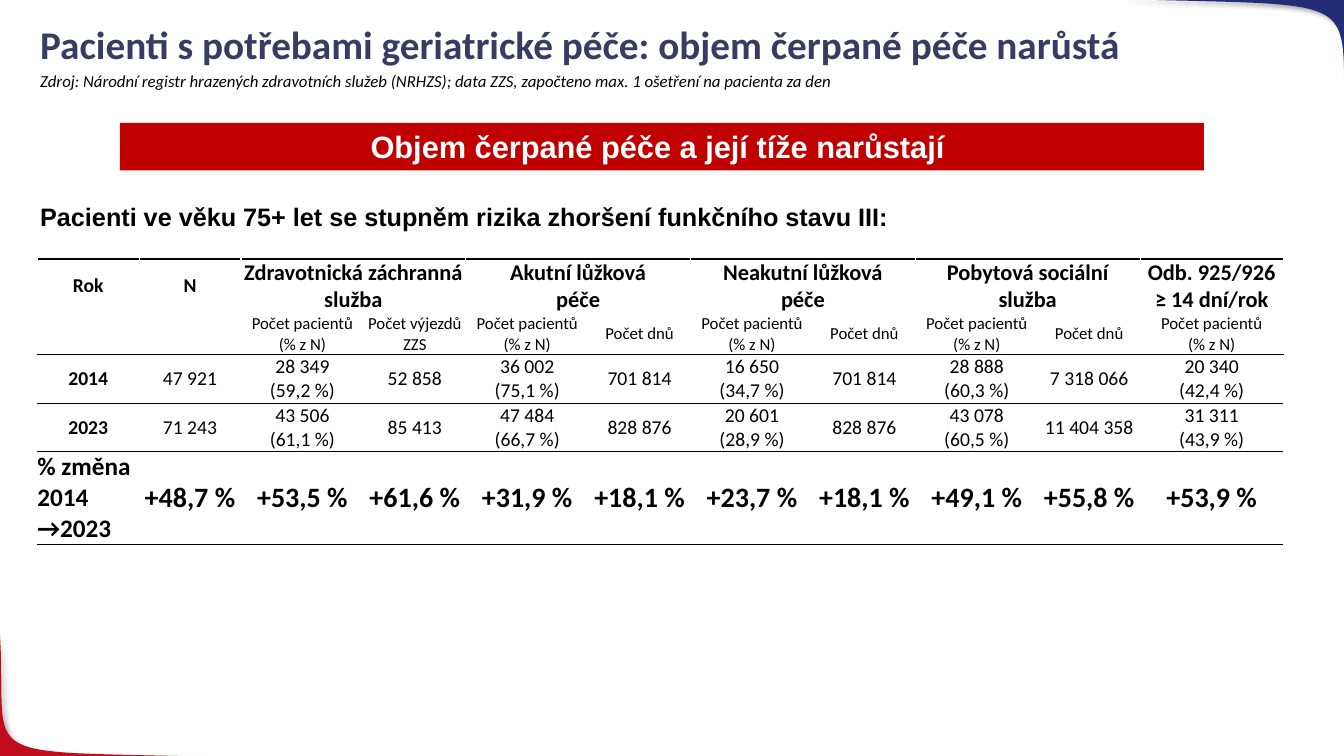
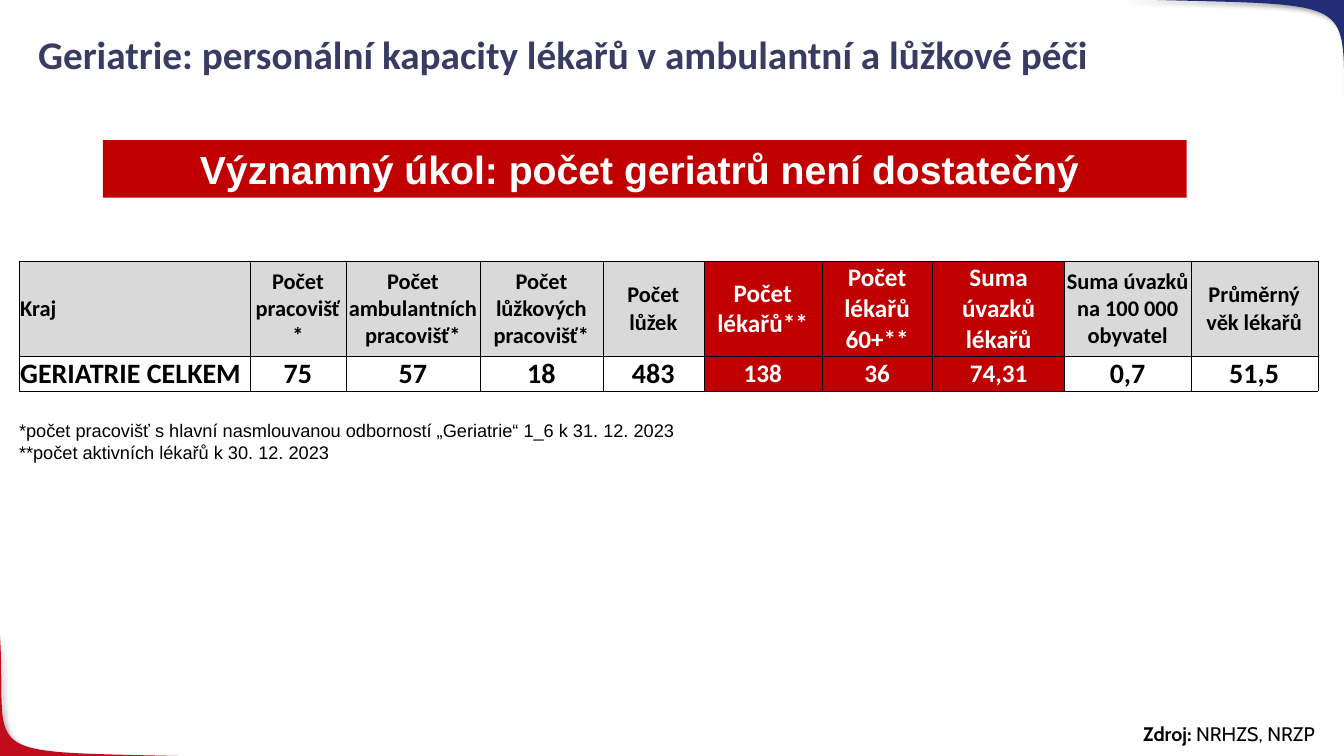
"""Builds two slides on geriatric care: consumed care and physician capacity."""
import pptx
import pptx.dml.color
import pptx.enum.shapes
import pptx.enum.text
import pptx.util
from lxml import etree
from pptx.util import Inches

PP = pptx.enum.text.PP_ALIGN
ANCHOR = pptx.enum.text.MSO_ANCHOR
NS = "http://schemas.openxmlformats.org/drawingml/2006/main"

THEME = {
    "navy": "232C77", "red": "C10C1D", "alert": "C00000", "grey": "D9D9D9",
    "title": "383C63", "ink": "000000", "white": "FFFFFF",
    "plain_table": "{2D5ABB26-0587-4C30-8999-92F81FD0307C}",
}
STYLES = {
    "title": {"name": "Calibri", "size": 28, "bold": True, "color": "title"},
    "source": {"name": "Calibri", "size": 12, "italic": True, "color": "ink"},
    "lead": {"name": "Arial", "size": 18, "bold": True, "color": "ink"},
    "banner": {"name": "Arial", "size": 22, "bold": True, "color": "white"},
    "footnote": {"name": "Arial", "size": 13, "color": "ink"},
    "credit": {"name": "Cabin", "size": 14, "color": "ink"},
    "cell": {"name": "Calibri", "size": 14, "color": "ink"},
}

CORNERS = [
    ("red", [(2.13, 7.51), (-0.34, 7.44), (0.08, 7.59), (0, 6.3)], (-0.01, 7.51)),
    ("navy", [(11.11, -0.01), (13.7, 0.07), (13.26, -0.1), (13.35, 1.42)], (13.35, -0.01)),
]

CARE_TITLE = "Pacienti s potřebami geriatrické péče: objem čerpané péče narůstá"
CARE_SOURCE = ("Zdroj: Národní registr hrazených zdravotních služeb (NRHZS); data ZZS, "
               "započteno max. 1 ošetření na pacienta za den")
CARE_BANNER = "Objem čerpané péče a její tíže narůstají "
CARE_LEAD = "Pacienti ve věku 75+ let se stupněm rizika zhoršení funkčního stavu III:"
PATIENTS = "Počet pacientů\n(% z N)"
CARE_ROWS = [
    ["Rok", "N", "Zdravotnická záchranná služba", "", "Akutní lůžková\npéče", "",
     "Neakutní lůžková\npéče", "", "Pobytová sociální služba", "", "Odb. 925/926\n≥ 14 dní/rok"],
    ["", "", PATIENTS, "Počet výjezdů ZZS", PATIENTS, "Počet dnů", PATIENTS, "Počet dnů",
     PATIENTS, "Počet dnů", PATIENTS],
    ["2014", "47 921", "28 349\n(59,2 %)", "52 858", "36 002\n(75,1 %)", "701 814",
     "16 650\n(34,7 %)", "701 814", "28 888\n(60,3 %)", "7 318 066", "20 340\n(42,4 %)"],
    ["2023", "71 243", "43 506\n(61,1 %)", "85 413", "47 484\n(66,7 %)", "828 876",
     "20 601\n(28,9 %)", "828 876", "43 078\n(60,5 %)", "11 404 358", "31 311\n(43,9 %)"],
    ["% změna 2014\n→2023", "+48,7 %", "+53,5 %", "+61,6 %", "+31,9 %", "+18,1 %",
     "+23,7 %", "+18,1 %", "+49,1 %", "+55,8 %", "+53,9 %"],
]
CARE_WIDTHS = [1.01] + [1.01, 1.22] * 4 + [1.01, 1.42]
CARE_HEIGHTS = [0.54, 0.41, 0.48, 0.48, 0.92]
CARE_GROUPS = [2, 4, 6, 8]
CARE_RULES = [{"T": 1}, {"B": 1}, {"T": 1, "B": 0.25}, {"T": 0.25, "B": 1}, {"T": 1, "B": 1}]
CARE_TEXT = [
    ({"size": 14, "bold": True}, {"size": 16, "bold": True}),
    ({"size": 12}, {"size": 12}),
    ({"bold": True}, {}),
    ({"bold": True}, {}),
    ({"size": 18, "bold": True}, {"size": 20, "bold": True}),
]

STAFF_TITLE = "Geriatrie: personální kapacity lékařů v ambulantní a lůžkové péči"
STAFF_BANNER = "Významný úkol: počet geriatrů není dostatečný "
STAFF_COLUMNS = [
    ("Kraj", "GERIATRIE CELKEM", 2.29),
    ("Počet pracovišť*", "75", 0.95),
    ("Počet ambulantních pracovišť*", "57", 1.33),
    ("Počet lůžkových pracovišť*", "18", 1.22),
    ("Počet lůžek", "483", 1),
    ("Počet lékařů**", "138", 1.17),
    ("Počet lékařů 60+**", "36", 1.1),
    ("Suma úvazků lékařů", "74,31", 1.31),
    ("Suma úvazků na 100 000 obyvatel", "0,7", 1.25),
    ("Průměrný věk lékařů", "51,5", 1.26),
]
STAFF_HEIGHTS = [0.94, 0.35]
STAFF_ALERTS = range(5, 8)
STAFF_NOTES = ("*počet pracovišť s hlavní nasmlouvanou odborností „Geriatrie“ 1_6 k 31. 12. 2023\n"
               "**počet aktivních lékařů k 30. 12. 2023")
STAFF_CREDIT = [("Zdroj: ", True), ("NRHZS, NRZP", False)]


def rgb(color):
    return pptx.dml.color.RGBColor.from_string(THEME[color])


def set_font(run, style, **changes):
    for key, value in {**STYLES[style], **changes}.items():
        if key == "color":
            run.font.color.rgb = rgb(value)
        else:
            setattr(run.font, key, pptx.util.Pt(value) if key == "size" else value)


def write(frame, text, style, align=PP.LEFT, spacing=None, **changes):
    frame.word_wrap = True
    frame.text = text
    for paragraph in frame.paragraphs:
        paragraph.alignment = align
        paragraph.line_spacing = spacing
        for run in paragraph.runs:
            set_font(run, style, **changes)


def add_text(slide, box, text, style, anchor=ANCHOR.TOP, **options):
    frame = slide.shapes.add_textbox(*map(Inches, box)).text_frame
    frame.vertical_anchor = anchor
    write(frame, text, style, **options)
    return frame


def add_title(slide, left, top, text):
    add_text(slide, (left, top, 12.68, 0.57), text, "title", ANCHOR.MIDDLE, spacing=0.9)


def add_banner(slide, left, top, height, text, size):
    banner = slide.shapes.add_shape(pptx.enum.shapes.MSO_SHAPE.RECTANGLE,
                                    *map(Inches, (left, top, 10.75, height)))
    banner.shadow.inherit = False
    banner.fill.solid()
    banner.fill.fore_color.rgb = rgb("alert")
    banner.line.fill.background()
    write(banner.text_frame, text, "banner", PP.CENTER, size=size)


def curve(points, steps=40):
    for step in range(steps + 1):
        t = step / steps
        weights = ((1 - t) ** 3, 3 * t * (1 - t) ** 2, 3 * t * t * (1 - t), t ** 3)
        yield tuple(Inches(sum(w * p[axis] for w, p in zip(weights, points))) for axis in (0, 1))


def add_corners(layout, slide):
    for placeholder in list(layout.placeholders):
        layout.shapes.element.remove(placeholder.element)
    for color, points, tip in CORNERS:
        start, *rest = curve(points)
        builder = slide.shapes.build_freeform(*start)
        builder.add_line_segments([*rest, tuple(map(Inches, tip))], close=True)
        corner = builder.convert_to_shape()
        corner.fill.solid()
        corner.fill.fore_color.rgb = rgb(color)
        corner.line.fill.background()
        corner.shadow.inherit = False
        effects = corner.element.find(f".//{{{NS}}}effectLst")
        effects.append(etree.fromstring(
            f'<a:outerShdw xmlns:a="{NS}" blurRad="50800" dist="38100" dir="2700000">'
            f'<a:srgbClr val="{THEME["ink"]}"><a:alpha val="40000"/></a:srgbClr></a:outerShdw>'))
        layout.shapes.element.append(corner.element)


def add_table(slide, left, top, widths, heights):
    box = map(Inches, (left, top, sum(widths), sum(heights)))
    graphic = slide.shapes.add_table(len(heights), len(widths), *box)
    graphic.element.find(f".//{{{NS}}}tableStyleId").text = THEME["plain_table"]
    table = graphic.table
    table.first_row = table.horz_banding = False
    for column, width in zip(table.columns, widths):
        column.width = Inches(width)
    for row, height in zip(table.rows, heights):
        row.height = Inches(height)
    return table


def fill_cell(cell, text, borders, inset=0, fill=None, anchor=ANCHOR.MIDDLE, **options):
    margins = {"margin_left": inset, "margin_right": inset, "margin_top": inset, "margin_bottom": 0}
    for key, value in margins.items():
        setattr(cell, key, Inches(value))
    cell.vertical_anchor = anchor
    properties = cell.fill and cell._tc.get_or_add_tcPr()
    for side in "LRTB":
        if side in borders:
            color, width = borders[side]
            properties.append(etree.fromstring(
                f'<a:ln{side} xmlns:a="{NS}" w="{int(pptx.util.Pt(width))}"><a:solidFill>'
                f'<a:srgbClr val="{THEME[color]}"/></a:solidFill></a:ln{side}>'))
    if fill:
        cell.fill.solid()
        cell.fill.fore_color.rgb = rgb(fill)
    else:
        cell.fill.background()
    write(cell.text_frame, text, "cell", **options)


def care_slide(slide):
    add_title(slide, 0.3, 0.18, CARE_TITLE)
    table = add_table(slide, 0.37, 2.57, CARE_WIDTHS, CARE_HEIGHTS)
    last = len(CARE_WIDTHS) - 1
    for r, row in enumerate(CARE_ROWS):
        for c, text in enumerate(row):
            borders = {side: ("ink", width) for side, width in CARE_RULES[r].items()}
            if r < 2 and c < last:
                borders["L"] = ("white", 1)
            if r < 2 and (c < CARE_GROUPS[-1] or c == last):
                borders["R"] = ("white", 1)
            label = c < 2 if r == 0 else c == 0
            align = PP.LEFT if c == 0 and r == len(CARE_ROWS) - 1 else PP.CENTER
            fill_cell(table.cell(r, c), text, borders, align=align, **CARE_TEXT[r][0 if label else 1])
    for c in CARE_GROUPS:
        table.cell(0, c).merge(table.cell(0, c + 1))
    add_text(slide, (0.3, 0.65, 11.38, 0.3), CARE_SOURCE, "source")
    add_text(slide, (0.3, 1.95, 9.29, 0.4), CARE_LEAD, "lead")
    add_banner(slide, 1.19, 1.22, 0.47, CARE_BANNER, 22)


def staff_slide(slide):
    *rows, widths = zip(*STAFF_COLUMNS)
    table = add_table(slide, 0.19, 2.59, widths, STAFF_HEIGHTS)
    borders = dict.fromkeys("LRTB", ("ink", 0.25))
    for r, row in enumerate(rows):
        for c, text in enumerate(row):
            alert = c in STAFF_ALERTS
            fill_cell(table.cell(r, c), text, borders, inset=0.01,
                      fill="alert" if alert else ("grey", None)[r],
                      anchor=ANCHOR.BOTTOM if r and c == 0 else ANCHOR.MIDDLE,
                      align=PP.CENTER if c else PP.LEFT, bold=True,
                      size=18 if alert else (16, 20)[r], color="white" if alert else "ink")
    add_text(slide, (0.09, 4.11, 6.98, 0.54), STAFF_NOTES, "footnote")
    credit = add_text(slide, (11.24, 7.11, 2.05, 0.34), "", "credit").paragraphs[0]
    for text, bold in STAFF_CREDIT:
        run = credit.add_run()
        run.text = text
        set_font(run, "credit", bold=bold)
    add_title(slide, 0.28, 0.28, STAFF_TITLE)
    add_banner(slide, 1.02, 1.39, 0.57, STAFF_BANNER, 28)


def main():
    deck = pptx.Presentation()
    deck.slide_width, deck.slide_height = Inches(13.33), Inches(7.5)
    layout = deck.slide_layouts[6]
    slides = [deck.slides.add_slide(layout) for _ in range(2)]
    add_corners(layout, slides[0])
    for build, slide in zip((care_slide, staff_slide), slides):
        build(slide)
    deck.save("out.pptx")


if __name__ == "__main__":
    main()
